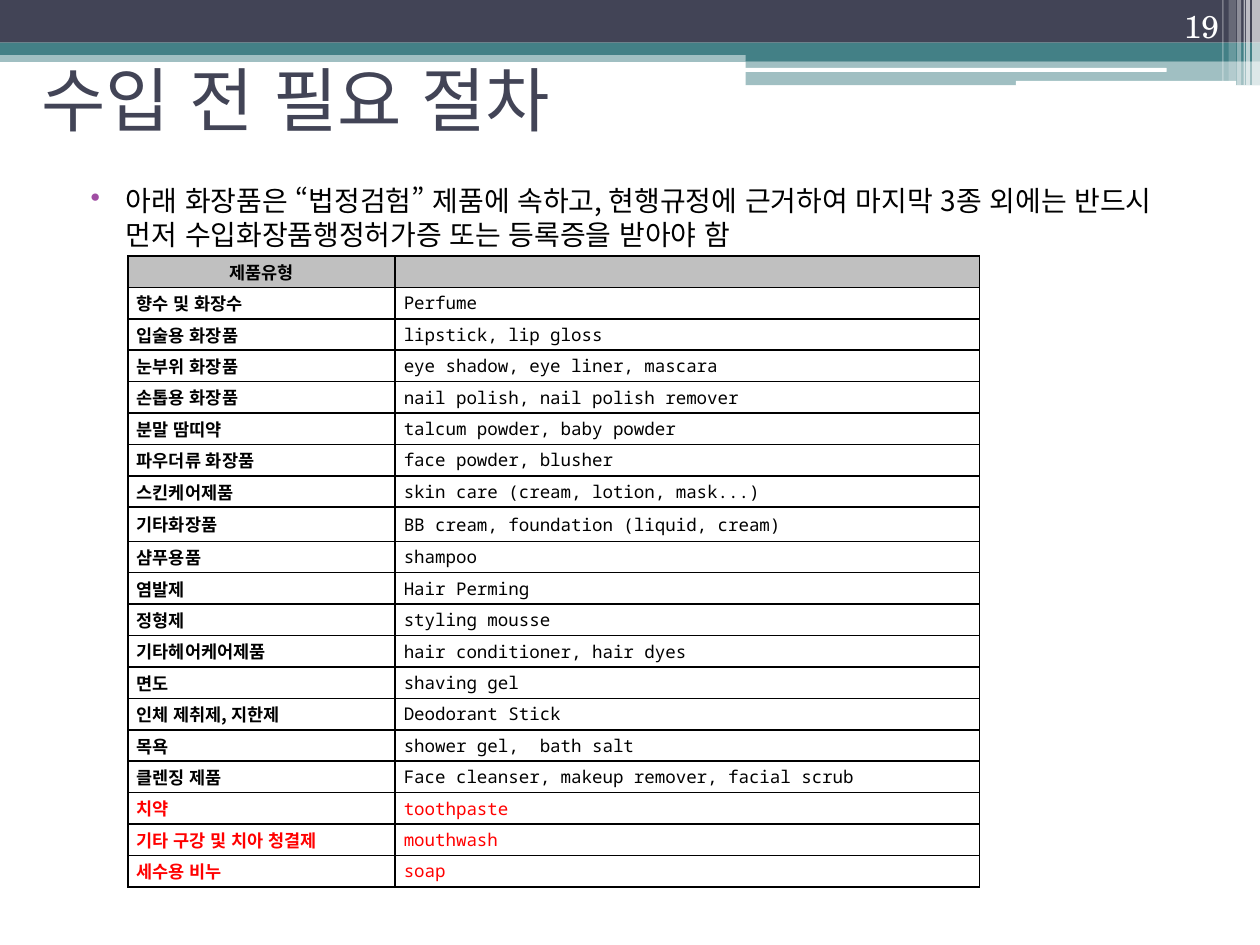
from lxml import etree
from pptx import Presentation
from pptx.dml.color import RGBColor
from pptx.enum.shapes import MSO_SHAPE
from pptx.enum.text import MSO_ANCHOR, PP_ALIGN
from pptx.oxml.ns import qn
from pptx.util import Cm, Pt

RECT, ROUNDED = MSO_SHAPE.RECTANGLE, MSO_SHAPE.ROUNDED_RECTANGLE
TOP, MIDDLE, BOTTOM = MSO_ANCHOR.TOP, MSO_ANCHOR.MIDDLE, MSO_ANCHOR.BOTTOM
LEFT, CENTER, RIGHT = PP_ALIGN.LEFT, PP_ALIGN.CENTER, PP_ALIGN.RIGHT

KOREAN, MONO, SERIF = "Noto Sans CJK KR", "Noto Sans Mono", "TeX Gyre Schola"
NAVY, TEAL, WHITE, BLACK = "424456", "438086", "FFFFFF", "000000"
RED, GRAY, PURPLE = "FF0000", "C0C0C0", "A04DA3"

# Content
TITLE = "수입 전 필요 절차"
NOTICE = ("아래 화장품은 “법정검험” 제품에 속하고, 현행규정에 근거하여 마지막 3종 외에는 "
          "반드시 먼저 수입화장품행정허가증 또는 등록증을 받아야 함")
PAGE_NUMBER = "19"
HEADINGS = ("제품유형", "")
PRODUCTS = [
    ("향수 및 화장수", "Perfume"),
    ("입술용 화장품", "lipstick, lip gloss"),
    ("눈부위 화장품", "eye shadow, eye liner, mascara"),
    ("손톱용 화장품", "nail polish, nail polish remover"),
    ("분말 땀띠약", "talcum powder, baby powder"),
    ("파우더류 화장품", "face powder, blusher"),
    ("스킨케어제품", "skin care (cream, lotion, mask...)"),
    ("기타화장품", "BB cream, foundation (liquid, cream)"),
    ("샴푸용품", "shampoo"),
    ("염발제", "Hair Perming"),
    ("정형제", "styling mousse"),
    ("기타헤어케어제품", "hair conditioner, hair dyes"),
    ("면도", "shaving gel"),
    ("인체 제취제, 지한제", "Deodorant Stick"),
    ("목욕", "shower gel,  bath salt"),
    ("클렌징 제품", "Face cleanser, makeup remover, facial scrub"),
    ("치약", "toothpaste"),
    ("기타 구강 및 치아 청결제", "mouthwash"),
    ("세수용 비누", "soap"),
]
EXEMPT_COUNT = 3  # the last products need no permit and are red

# Header bands: shape, left, top, width, height (cm), colour, opacity in %
BANDS = [
    (RECT, 0, 1.02, 25.4, 0.23, TEAL, 50),
    (RECT, 0, 0, 25.4, 0.86, NAVY, 100),
    (RECT, 0, 0.86, 25.4, 0.25, TEAL, 100),
    (RECT, 15.03, 0.98, 10.37, 0.25, TEAL, 100),
    (RECT, 15.03, 1.22, 10.37, 0.5, TEAL, 50),
    (ROUNDED, 15.01, 1.37, 8.51, 0.08, WHITE, 100),
    (ROUNDED, 20.48, 1.63, 4.44, 0.1, WHITE, 100),
]
# White stripes at the right edge: left, width, height (cm), opacity in %
STRIPES = [
    (25.24, 0.16, 1.72, 65), (25.12, 0.08, 1.72, 65), (25.07, 0.03, 1.72, 60),
    (24.94, 0.08, 1.72, 40), (24.77, 0.15, 1.63, 20), (24.64, 0.03, 1.63, 30),
]

# Table measures (cm)
TABLE_LEFT, TABLE_TOP, TABLE_HEIGHT = 2.58, 5.16, 12.73
COLUMN_WIDTHS = (5.38, 11.79)
TALL_ROW, TALL_ROW_HEIGHT = 8, 0.69


def rgb(hex_color):
    return RGBColor.from_string(hex_color)


def add_band(slide, kind, left, top, width, height, color, opacity):
    band = slide.shapes.add_shape(kind, Cm(left), Cm(top), Cm(width), Cm(height))
    band.shadow.inherit = False
    band.line.fill.background()
    band.fill.solid()
    band.fill.fore_color.rgb = rgb(color)
    if opacity < 100:
        tint = band.fill._xPr.find(".//" + qn("a:srgbClr"))
        etree.SubElement(tint, qn("a:alpha"), val=str(opacity * 1000))


def write(frame, text, *, size, font=KOREAN, color=BLACK, bold=False, align=LEFT):
    paragraph = frame.paragraphs[0]
    paragraph.alignment = align
    if not text:  # an empty cell still needs its text size
        etree.SubElement(paragraph._p, qn("a:endParaRPr"), sz=str(size * 100))
        return paragraph
    run = paragraph.add_run()
    run.text = text
    run.font.size, run.font.bold, run.font.name = Pt(size), bold, font
    run.font.color.rgb = rgb(color)
    props = run._r.get_or_add_rPr()
    props.set("lang", "ko-KR")
    props.set("kern", "0")
    etree.SubElement(props, qn("a:ea"), typeface=font)
    return paragraph


def add_frame(slide, left, top, width, height, anchor):
    frame = slide.shapes.add_textbox(Cm(left), Cm(top), Cm(width), Cm(height)).text_frame
    frame.word_wrap = True
    frame.vertical_anchor = anchor
    return frame


def add_bullet(paragraph, mark, color, margin, indent):
    props = paragraph._p.get_or_add_pPr()
    props.set("marL", str(Cm(margin)))
    props.set("indent", str(Cm(indent)))
    bullet_color = etree.SubElement(props, qn("a:buClr"))
    etree.SubElement(bullet_color, qn("a:srgbClr"), val=color)
    etree.SubElement(props, qn("a:buChar"), char=mark)


def style_cell(cell, fill):
    cell.vertical_anchor = MIDDLE
    cell.margin_left = cell.margin_right = Cm(0.18)
    cell.margin_top = cell.margin_bottom = 0
    props = cell._tc.get_or_add_tcPr()
    for side in ("a:lnL", "a:lnR", "a:lnT", "a:lnB"):
        border = etree.SubElement(props, qn(side), w=str(Pt(1)))
        paint = etree.SubElement(border, qn("a:solidFill"))
        etree.SubElement(paint, qn("a:srgbClr"), val=BLACK)
    if fill:
        cell.fill.solid()
        cell.fill.fore_color.rgb = rgb(fill)
    else:
        cell.fill.background()


def add_products(slide):
    rows = [HEADINGS] + PRODUCTS
    table = slide.shapes.add_table(
        len(rows), len(COLUMN_WIDTHS), Cm(TABLE_LEFT), Cm(TABLE_TOP),
        Cm(sum(COLUMN_WIDTHS)), Cm(TABLE_HEIGHT)).table
    for column, width in zip(table.columns, COLUMN_WIDTHS):
        column.width = Cm(width)
    row_height = (TABLE_HEIGHT - TALL_ROW_HEIGHT) / (len(rows) - 1)
    for r, texts in enumerate(rows):
        table.rows[r].height = Cm(TALL_ROW_HEIGHT if r == TALL_ROW else row_height)
        color = RED if r >= len(rows) - EXEMPT_COUNT else BLACK
        for c, text in enumerate(texts):
            cell = table.cell(r, c)
            style_cell(cell, GRAY if r == 0 else None)
            write(cell.text_frame, text, size=10, font=MONO if c else KOREAN,
                  color=color, bold=c == 0, align=CENTER if r == 0 else LEFT)


def main():
    deck = Presentation()
    deck.slide_width, deck.slide_height = Cm(25.4), Cm(19.05)
    slide = deck.slides.add_slide(deck.slide_layouts[6])

    # Header decoration
    for band in BANDS:
        add_band(slide, *band)
    for left, width, height, opacity in STRIPES:
        add_band(slide, RECT, left, 0, width, height, WHITE, opacity)

    # Title and notice
    write(add_frame(slide, 0.58, 0.99, 22.86, 1.98, MIDDLE), TITLE, size=40, color=NAVY)
    notice = write(add_frame(slide, 1.27, 3.58, 22.86, 2.77, TOP), NOTICE, size=16)
    notice.space_before = Pt(3)
    add_bullet(notice, "•", PURPLE, 1.02, -0.71)

    # Product table and page number
    add_products(slide)
    write(add_frame(slide, 22.71, 0, 2.11, 1.02, BOTTOM), PAGE_NUMBER,
          size=18, font=SERIF, color=WHITE, align=RIGHT)

    deck.save("out.pptx")


if __name__ == "__main__":
    main()
